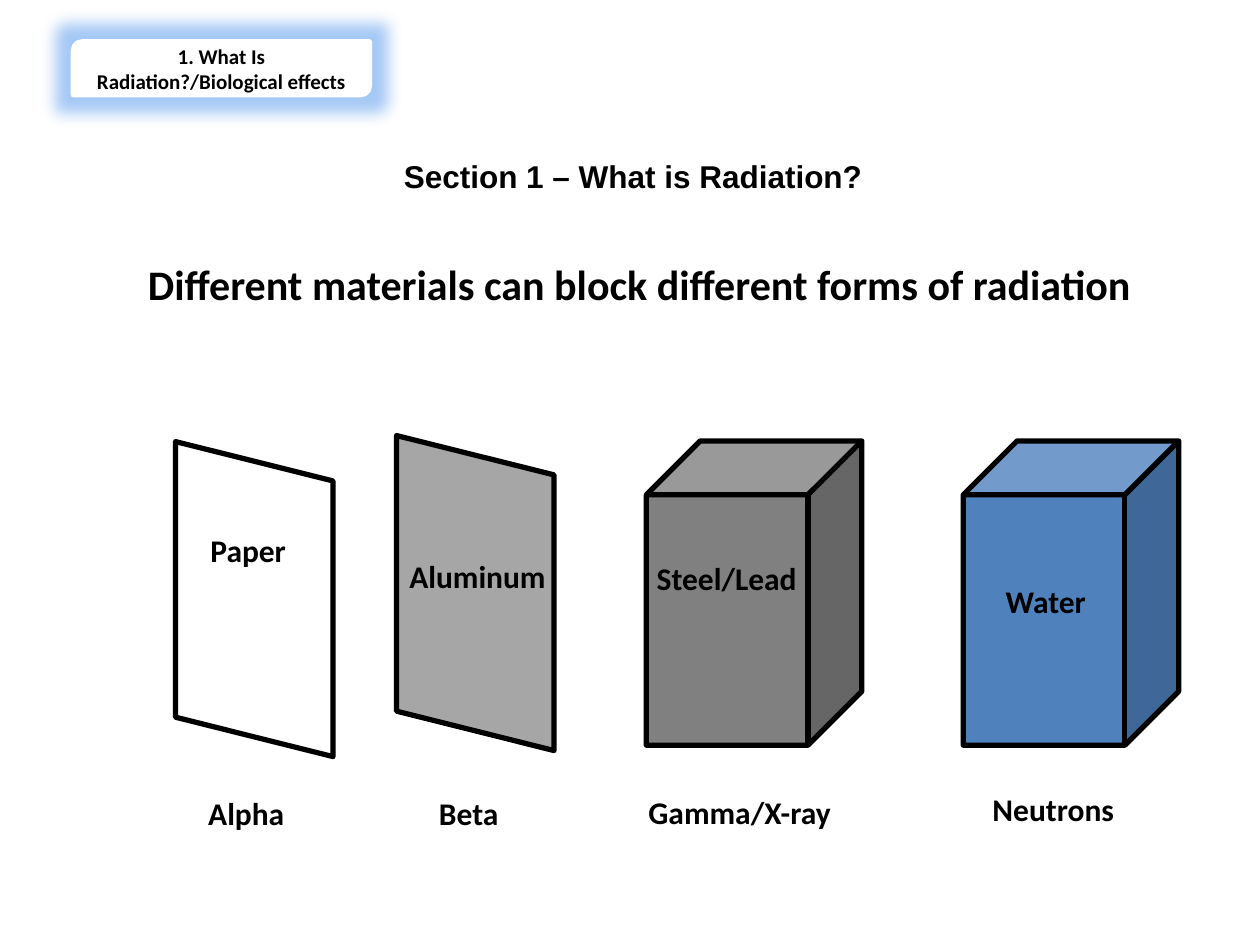
import pptx
import pptx.dml.color
import pptx.enum.shapes
import pptx.enum.text
import pptx.oxml
import pptx.oxml.ns
import pptx.util

COLUMNS, ROWS = 100, 75
CELL = pptx.util.Inches(0.1)
SHAPES = pptx.enum.shapes.MSO_SHAPE
BLACK, WHITE = "000000", "FFFFFF"
LABEL_ROWS = 4

SHEETS = [
    (13.93, 35.05, WHITE),
    (31.47, 34.57, "A6A6A6"),
]
BLOCKS = [
    (51.3, "808080"),
    (76.45, "4F81BD"),
]
MATERIALS = [
    ("Paper", 14.15, 41.65, 11.1),
    ("Aluminum", 30.4, 43.7, 15),
    ("Steel/Lead", 50.53, 43.85, 14.3),
    ("Water", 77.45, 45.7, 11.1),
]
RADIATION_FORMS = [
    ("Alpha", 12.4, 62.5, 14.3),
    ("Beta", 30.05, 62.5, 14.3),
    ("Gamma/X-ray", 50.15, 62.45, 17.1),
    ("Neutrons", 76.45, 62.2, 14.3),
]


def color(hex_code):
    """Turn a hex string into a color."""
    return pptx.dml.color.RGBColor.from_string(hex_code)


def cells(*counts):
    """Turn grid cell counts into lengths."""
    return [round(count * CELL) for count in counts]


def write(frame, wording, size, font="Calibri"):
    """Write one bold, centred, wrapped line of text."""
    frame.word_wrap = True
    paragraph = frame.paragraphs[0]
    paragraph.alignment = pptx.enum.text.PP_ALIGN.CENTER
    run = paragraph.add_run()
    run.text = wording
    run.font.size = pptx.util.Pt(size)
    run.font.name = font
    run.font.bold = True
    run.font.color.rgb = color(BLACK)


def add_title(slide, wording):
    """Place the main statement in the title placeholder."""
    title = slide.shapes.title
    title.left, title.top, title.width, title.height = cells(6.7, 20, 88.1, 5)
    write(title.text_frame, wording, 24)


def add_label(slide, wording, column, row, width):
    """Add a text label on the grid."""
    label = slide.shapes.add_textbox(*cells(column, row, width, LABEL_ROWS))
    write(label.text_frame, wording, 18)


def add_solid(slide, kind, box, fill, line, weight=3):
    """Add a filled and outlined preset shape on the grid."""
    solid = slide.shapes.add_shape(kind, *cells(*box))
    solid.shadow.inherit = False
    solid.fill.solid()
    solid.fill.fore_color.rgb = color(fill)
    solid.line.color.rgb = color(line)
    solid.line.width = pptx.util.Pt(weight)
    return solid


def add_section_heading(slide, wording):
    """Add the section heading on its white band."""
    box = (12.4, 12, 75.7, LABEL_ROWS)
    heading = add_solid(slide, SHAPES.RECTANGLE, box, WHITE, WHITE, 4.5)
    heading.text_frame.vertical_anchor = pptx.enum.text.MSO_ANCHOR.TOP
    write(heading.text_frame, wording, 18, "Arial")


def add_sheet(slide, column, row, fill):
    """Add a thin upright barrier as a parallelogram turned on its side."""
    length, depth = 25, 12.5
    turn = (length - depth) / 2
    box = (column - turn, row + turn, length, depth)
    sheet = add_solid(slide, SHAPES.PARALLELOGRAM, box, fill, BLACK)
    sheet.rotation = 90


def add_block(slide, column, fill):
    """Add a thick barrier as a cube."""
    add_solid(slide, SHAPES.CUBE, (column, 35, 17.1, 24.15), fill, BLACK)


def add_chapter_tag(slide, wording):
    """Add the glowing chapter tag in the corner."""
    box = (5.82, 3.32, 23.5, 4.2)
    tag = add_solid(slide, SHAPES.ROUND_2_DIAG_RECTANGLE, box, WHITE, WHITE)
    tag.text_frame.vertical_anchor = pptx.enum.text.MSO_ANCHOR.MIDDLE
    write(tag.text_frame, wording, 12)
    effects = tag.element.spPr.find(pptx.oxml.ns.qn("a:effectLst"))
    effects.append(pptx.oxml.parse_xml(
        f'<a:glow {pptx.oxml.ns.nsdecls("a")} rad="{pptx.util.Pt(18)}">'
        '<a:srgbClr val="1F78E8"><a:alpha val="40000"/></a:srgbClr></a:glow>'
    ))


def main():
    """Build the slide on radiation barriers."""
    deck = pptx.Presentation()
    deck.slide_width, deck.slide_height = cells(COLUMNS, ROWS)
    slide = deck.slides.add_slide(deck.slide_layouts.get_by_name("Title Only"))
    add_title(slide, "Different materials can block different forms of radiation")
    add_chapter_tag(slide, "1. What Is Radiation?/Biological effects")
    add_section_heading(slide, "Section 1 – What is Radiation?")
    for sheet in SHEETS:
        add_sheet(slide, *sheet)
    for block in BLOCKS:
        add_block(slide, *block)
    for label in RADIATION_FORMS + MATERIALS:
        add_label(slide, *label)
    deck.save("out.pptx")


if __name__ == "__main__":
    main()
